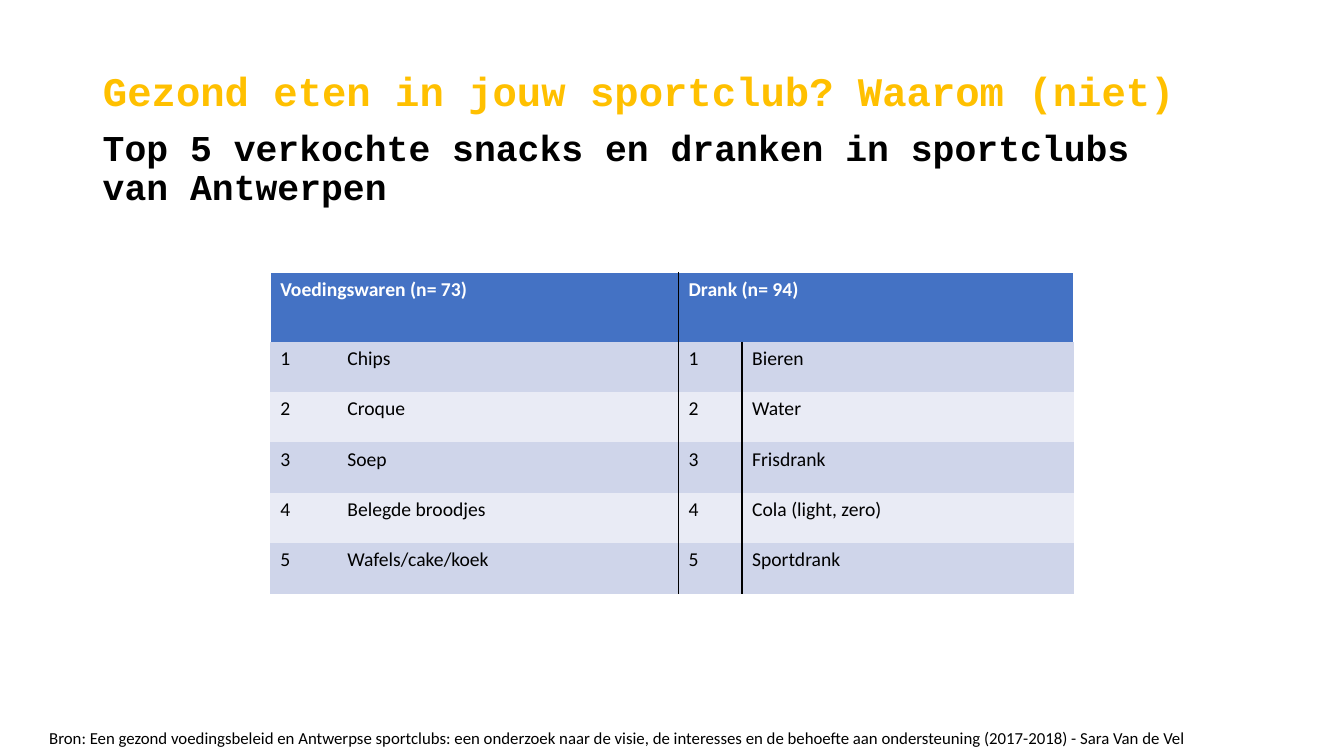
from lxml import etree
from pptx import Presentation
from pptx import util as u
from pptx.dml.color import RGBColor
from pptx.enum import text
from pptx.oxml import ns

COLOURS = {
    "title": "FFC000",
    "text": "000000",
    "white": "FFFFFF",
    "header": "4472C4",
    "band_dark": "CFD5EA",
    "band_light": "E9EBF5",
}
NO_STYLE_NO_GRID = "{2D5ABB26-0587-4C30-8999-92F81FD0307C}"


class SlideBuilder:
    heading_font = "Courier New"
    body_font = "Calibri"

    def __init__(self, slide):
        self.slide = slide

    def colour(self, name):
        return RGBColor.from_string(COLOURS[name])

    def set_text(self, frame, content, font, size, colour, bold=False):
        frame.text = content
        paragraph = frame.paragraphs[0]
        paragraph.font.name = font
        paragraph.font.size = u.Pt(size)
        paragraph.font.bold = bold
        paragraph.font.color.rgb = self.colour(colour)
        return paragraph

    def heading(self, shape, box, content, size, colour):
        shape.left, shape.top, shape.width, shape.height = map(u.Cm, box)
        frame = shape.text_frame
        frame.word_wrap = True
        frame.auto_size = text.MSO_AUTO_SIZE.NONE
        frame.vertical_anchor = text.MSO_ANCHOR.MIDDLE
        paragraph = self.set_text(frame, content, self.heading_font, size, colour, True)
        paragraph.alignment = text.PP_ALIGN.LEFT
        paragraph.line_spacing = 0.9

    def title(self, box, content):
        self.heading(self.slide.shapes.title, box, content, 29, "title")

    def subtitle(self, box, content):
        shape = self.slide.shapes.add_textbox(*map(u.Cm, box))
        self.heading(shape, box, content, 26, "text")

    def source_line(self, box, content):
        frame = self.slide.shapes.add_textbox(*map(u.Cm, box)).text_frame
        frame.word_wrap = True
        self.set_text(frame, content, self.body_font, 12, "text")

    def cell(self, cell, content, fill, colour="text", bold=False, borders=()):
        # Borders come before the fill in the cell properties
        properties = cell._tc.get_or_add_tcPr()
        for side, line_colour in borders:
            line = etree.SubElement(properties, ns.qn("a:ln" + side), w=str(u.Pt(1)))
            solid = etree.SubElement(line, ns.qn("a:solidFill"))
            etree.SubElement(solid, ns.qn("a:srgbClr"), val=COLOURS[line_colour])
        cell.fill.solid()
        cell.fill.fore_color.rgb = self.colour(fill)
        self.set_text(cell.text_frame, content, self.body_font, 14, colour, bold)

    def ranking_table(self, left, top, widths, heights, headers, rows):
        frame = self.slide.shapes.add_table(
            len(heights), len(widths), u.Cm(left), u.Cm(top),
            u.Cm(sum(widths)), u.Cm(sum(heights)))
        table = frame.table
        table._tbl.tblPr[0].text = NO_STYLE_NO_GRID
        for column, width in zip(table.columns, widths):
            column.width = u.Cm(width)
        for row, height in zip(table.rows, heights):
            row.height = u.Cm(height)

        # Header: one merged cell over each rank and name pair
        edges = (("white", "text"), ("text", "white"))
        for index, (header, (left_edge, right_edge)) in enumerate(zip(headers, edges)):
            first = table.cell(0, 2 * index)
            first.merge(table.cell(0, 2 * index + 1))
            self.cell(first, header, "header", "white", True,
                      [("L", left_edge), ("R", right_edge), ("T", "white")])

        # Ranked rows with alternating bands and a black divider in the middle
        divider = {1: [("R", "text")], 2: [("L", "text")]}
        for rank, (food, drink) in enumerate(rows, start=1):
            fill = "band_dark" if rank % 2 else "band_light"
            for column, content in enumerate((str(rank), food, str(rank), drink)):
                self.cell(table.cell(rank, column), content, fill,
                          borders=divider.get(column, ()))


def main():
    presentation = Presentation()
    presentation.slide_width = u.Cm(33.87)
    presentation.slide_height = u.Cm(19.05)
    slide = presentation.slides.add_slide(presentation.slide_layouts[5])
    builder = SlideBuilder(slide)

    # Headings
    builder.title((2.34, 1.65, 30.53, 1.4),
                  "Gezond eten in jouw sportclub? Waarom (niet)")
    builder.subtitle((2.34, 2.87, 27.48, 2.79),
                     "Top 5 verkochte snacks en dranken in sportclubs van Antwerpen")

    # Top five of food and drinks
    rows = [
        ("Chips", "Bieren"),
        ("Croque", "Water"),
        ("Soep", "Frisdrank"),
        ("Belegde broodjes", "Cola (light, zero)"),
        ("Wafels/cake/koek", "Sportdrank"),
    ]
    builder.ranking_table(
        6.81, 6.87, (1.69, 8.6, 1.6, 8.36), [1.74] + [1.27] * len(rows),
        ("Voedingswaren (n= 73)", "Drank (n= 94)"), rows)

    # Source
    builder.source_line(
        (0.99, 18.21, 32.33, 0.77),
        "Bron: Een gezond voedingsbeleid en Antwerpse sportclubs: een onderzoek "
        "naar de visie, de interesses en de behoefte aan ondersteuning "
        "(2017-2018) - Sara Van de Vel")

    presentation.save("out.pptx")


if __name__ == "__main__":
    main()
